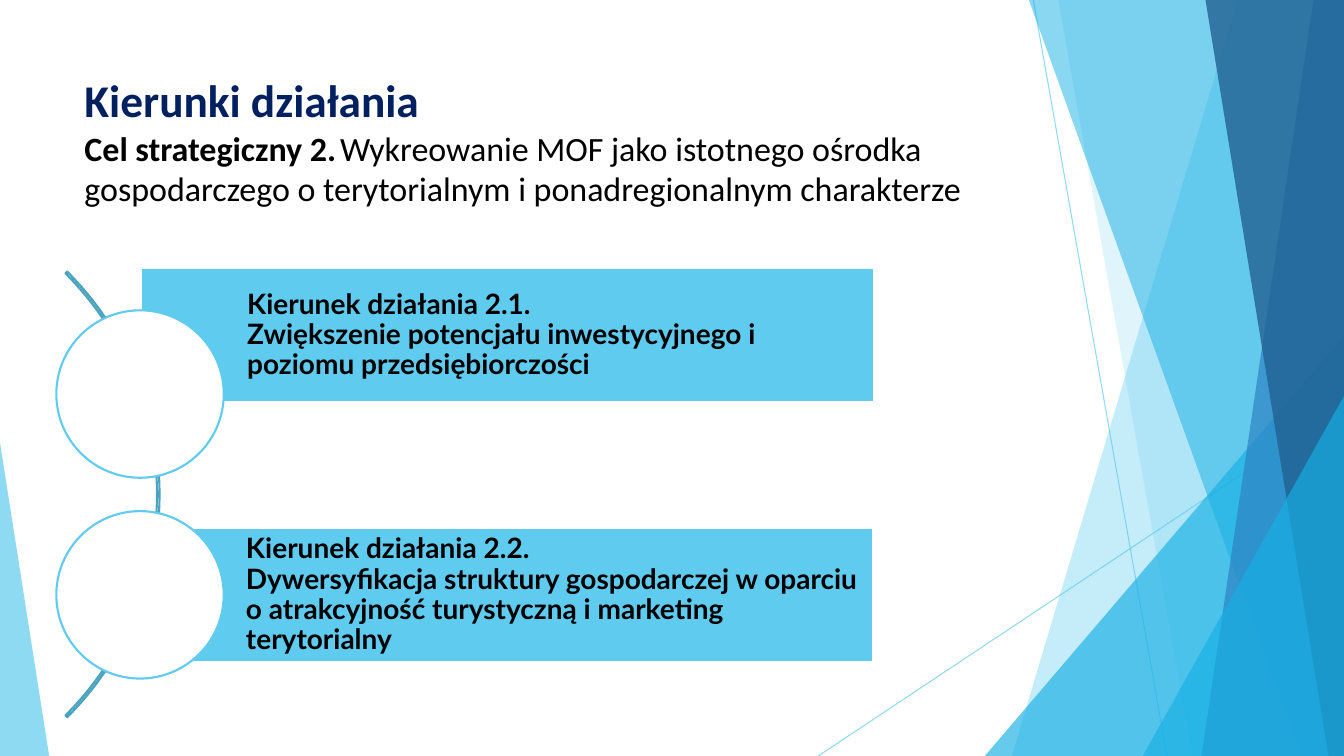
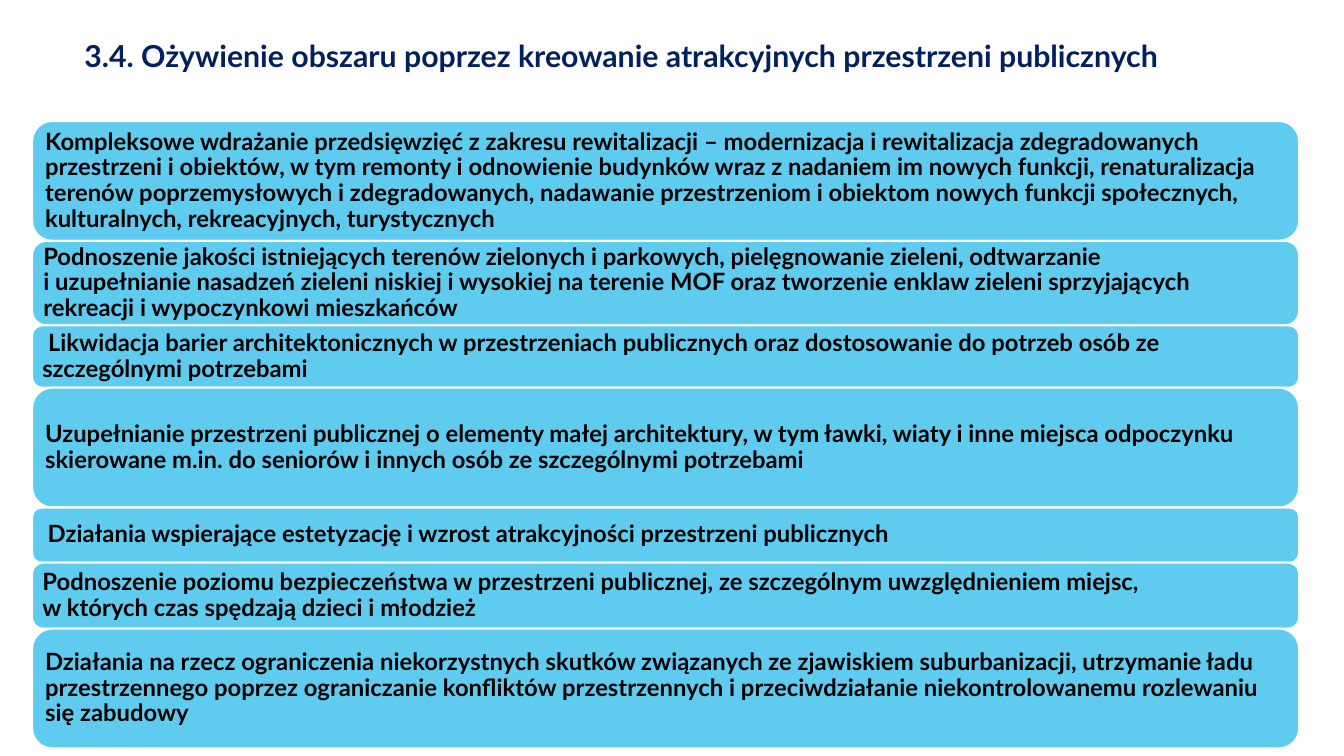
from dataclasses import dataclass

from lxml import etree
from pptx import Presentation
from pptx.dml.color import RGBColor
from pptx.enum.shapes import MSO_CONNECTOR, MSO_SHAPE
from pptx.enum.text import MSO_ANCHOR, PP_ALIGN
from pptx.oxml.ns import qn
from pptx.util import Cm, Pt

STRAIGHT = MSO_CONNECTOR.STRAIGHT
RECTANGLE = MSO_SHAPE.RECTANGLE
ROUNDED = MSO_SHAPE.ROUNDED_RECTANGLE
CIRCLE = MSO_SHAPE.OVAL
TRIANGLE = MSO_SHAPE.ISOSCELES_TRIANGLE
BLOCK_ARC = MSO_SHAPE.BLOCK_ARC
TOP, MIDDLE = MSO_ANCHOR.TOP, MSO_ANCHOR.MIDDLE
LEFT = PP_ALIGN.LEFT


@dataclass(frozen=True)
class Theme:
    sky: str = "5FCBEF"
    azure: str = "17B0E4"
    blue: str = "2E83C3"
    deep: str = "226292"
    arc: str = "4CA3BF"
    navy: str = "002060"
    black: str = "000000"
    white: str = "FFFFFF"
    heading_font: str = "Calibri"
    body_font: str = "Lato"
    heading: float = 32.4
    goal: float = 24.3
    goal_gap: float = 11.7
    action_heading: float = 21.6
    direction: float = 20
    action: float = 17
    outline: float = 1.5
    hairline: float = 0.75


THEME = Theme()
WIDTH, HEIGHT = 33.87, 19.05


def paint(shape, fill=None, line=None, alpha=None):
    shape.shadow.inherit = False
    if fill:
        shape.fill.solid()
        shape.fill.fore_color.rgb = RGBColor.from_string(fill)
    else:
        shape.fill.background()
    if line:
        shape.line.color.rgb = RGBColor.from_string(line)
        shape.line.width = Pt(THEME.outline)
    else:
        shape.line.fill.background()
    if alpha:
        color = shape.fill._xPr.find(qn("a:solidFill"))[0]
        etree.SubElement(color, qn("a:alpha"), val=str(alpha * 1000))


def write(shape, lines, font, insets, anchor=MIDDLE, spacing=0.9):
    frame = shape.text_frame
    frame.word_wrap = True
    frame.vertical_anchor = anchor
    frame.margin_left, frame.margin_top, frame.margin_right, frame.margin_bottom = map(Cm, insets)
    paragraph = frame.paragraphs[0]
    paragraph.alignment = LEFT
    paragraph.line_spacing = spacing
    for number, runs in enumerate(lines):
        if number:
            paragraph.add_line_break()
        for text, size, color, bold in runs:
            run = paragraph.add_run()
            run.text = text
            run.font.name = font
            run.font.size = Pt(size)
            run.font.bold = bold
            run.font.color.rgb = RGBColor.from_string(color)


deck = Presentation()
deck.slide_width, deck.slide_height = Cm(WIDTH), Cm(HEIGHT)
blank = deck.slide_layouts[6]
title_insets = (0.25, 0.13, 0.25, 0.13)

directions_slide = deck.slides.add_slide(blank)
shapes = directions_slide.shapes

for start_x, start_y, end_x, end_y in [(26.04, 0, 29.41, HEIGHT), (WIDTH, 10.24, 20.62, HEIGHT)]:
    ray = shapes.add_connector(STRAIGHT, Cm(start_x), Cm(start_y), Cm(end_x), Cm(end_y))
    ray.line.color.rgb = RGBColor.from_string(THEME.sky)
    ray.line.width = Pt(THEME.hairline)
    ray_color = ray.line.fill._xPr.find(qn("a:solidFill"))[0]
    etree.SubElement(ray_color, qn("a:alpha"), val="70000")
    etree.SubElement(ray._element.spPr, qn("a:effectLst"))

facets = [
    ("band", 31.19, 25.5, THEME.sky, 36),
    ("band", 26.67, 30.05, THEME.sky, 20),
    ("corner", 24.82, 8.46, THEME.azure, 66),
    ("band", 25.93, 32.79, THEME.azure, 50),
    ("band", 33.1, 30.28, THEME.blue, 70),
    ("band", 30.38, 33.48, THEME.deep, 80),
    ("corner", 28.8, 9.98, THEME.azure, 66),
]
for kind, first, second, color, alpha in facets:
    if kind == "band":
        outline = shapes.build_freeform(Cm(first), Cm(0))
        corners = [(WIDTH, 0), (WIDTH, HEIGHT), (second, HEIGHT)]
        outline.add_line_segments([(Cm(x), Cm(y)) for x, y in corners], close=True)
        facet = outline.convert_to_shape()
    else:
        facet = shapes.add_shape(
            TRIANGLE, Cm(first), Cm(second), Cm(WIDTH - first), Cm(HEIGHT - second))
        facet.adjustments[0] = 1
    paint(facet, color, alpha=alpha)

left_wedge = shapes.add_shape(TRIANGLE, Cm(0), Cm(11.15), Cm(1.24), Cm(HEIGHT - 11.15))
left_wedge.adjustments[0] = 0
paint(left_wedge, THEME.sky, alpha=70)

heading = shapes.add_textbox(Cm(1.88), Cm(1.7), Cm(23.88), Cm(3.8))
write(heading, [
    [("Kierunki działania", THEME.heading, THEME.navy, True)],
    [("Cel strategiczny 2.", THEME.goal, THEME.black, True),
     (" ", THEME.goal_gap, THEME.black, False),
     ("Wykreowanie MOF jako istotnego ośrodka gospodarczego o terytorialnym "
      "i ponadregionalnym charakterze", THEME.goal, THEME.black, False)],
], THEME.heading_font, title_insets, TOP, 1.0)

spine = shapes.add_shape(BLOCK_ARC, Cm(-11.86), Cm(4.52), Cm(15.88), Cm(15.88))
for index, value in enumerate((189, 27, 0.004)):
    spine.adjustments[index] = value
paint(spine, line=THEME.arc)

directions = [
    (3.56, 6.76, 7.82, "Kierunek działania 2.1.",
     "Zwiększenie potencjału inwestycyjnego i poziomu przedsiębiorczości"),
    (3.53, 13.31, 12.88, "Kierunek działania 2.2.",
     "Dywersyfikacja struktury gospodarczej w oparciu o atrakcyjność turystyczną "
     "i marketing terytorialny"),
]
for bar_left, bar_top, node_top, label, description in directions:
    bar = shapes.add_shape(RECTANGLE, Cm(bar_left), Cm(bar_top), Cm(18.47), Cm(3.38))
    paint(bar, THEME.sky, THEME.white)
    write(bar, [[(text, THEME.direction, THEME.black, True)] for text in (label, description)],
          THEME.body_font, (2.67, 0.15, 0.15, 0.15))
    node = shapes.add_shape(CIRCLE, Cm(1.42), Cm(node_top), Cm(4.22), Cm(4.22))
    paint(node, THEME.white, THEME.sky)

actions_slide = deck.slides.add_slide(blank)
shapes = actions_slide.shapes

action_heading = shapes.add_textbox(Cm(1.88), Cm(0.81), Cm(29.92), Cm(1.5))
write(action_heading, [
    [("3.4. Ożywienie obszaru poprzez kreowanie atrakcyjnych przestrzeni publicznych",
      THEME.action_heading, THEME.navy, True)],
], THEME.body_font, title_insets, TOP, 1.0)

actions = [
    (3.02, ["Kompleksowe wdrażanie przedsięwzięć z zakresu rewitalizacji – modernizacja "
            "i rewitalizacja zdegradowanych przestrzeni i obiektów, w tym remonty i odnowienie "
            "budynków wraz z nadaniem im nowych funkcji, renaturalizacja terenów poprzemysłowych "
            "i zdegradowanych, nadawanie przestrzeniom i obiektom nowych funkcji społecznych, "
            "kulturalnych, rekreacyjnych, turystycznych"]),
    (2.13, ["Podnoszenie jakości istniejących terenów zielonych i parkowych, pielęgnowanie "
            "zieleni, odtwarzanie",
            "i uzupełnianie nasadzeń zieleni niskiej i wysokiej na terenie MOF oraz tworzenie "
            "enklaw zieleni sprzyjających rekreacji i wypoczynkowi mieszkańców"]),
    (1.57, [" Likwidacja barier architektonicznych w przestrzeniach publicznych oraz "
            "dostosowanie do potrzeb osób ze szczególnymi potrzebami"]),
    (3.02, ["Uzupełnianie przestrzeni publicznej o elementy małej architektury, w tym ławki, "
            "wiaty i inne miejsca odpoczynku skierowane m.in. do seniorów i innych osób "
            "ze szczególnymi potrzebami"]),
    (1.39, [" Działania wspierające estetyzację i wzrost atrakcyjności przestrzeni publicznych"]),
    (1.66, ["Podnoszenie poziomu bezpieczeństwa w przestrzeni publicznej, ze szczególnym "
            "uwzględnieniem miejsc,",
            "w których czas spędzają dzieci i młodzież"]),
    (3.02, ["Działania na rzecz ograniczenia niekorzystnych skutków związanych ze zjawiskiem "
            "suburbanizacji, utrzymanie ładu przestrzennego poprzez ograniczanie konfliktów "
            "przestrzennych i przeciwdziałanie niekontrolowanemu rozlewaniu się zabudowy"]),
]
action_top = 3.05
for action_height, lines in actions:
    action = shapes.add_shape(ROUNDED, Cm(0.81), Cm(action_top), Cm(31.93), Cm(action_height))
    paint(action, THEME.sky, THEME.white)
    write(action, [[(text, THEME.action, THEME.black, True)] for text in lines],
          THEME.body_font, (0.18, 0.18, 0.18, 0.18))
    action_top += action_height

deck.save("out.pptx")
